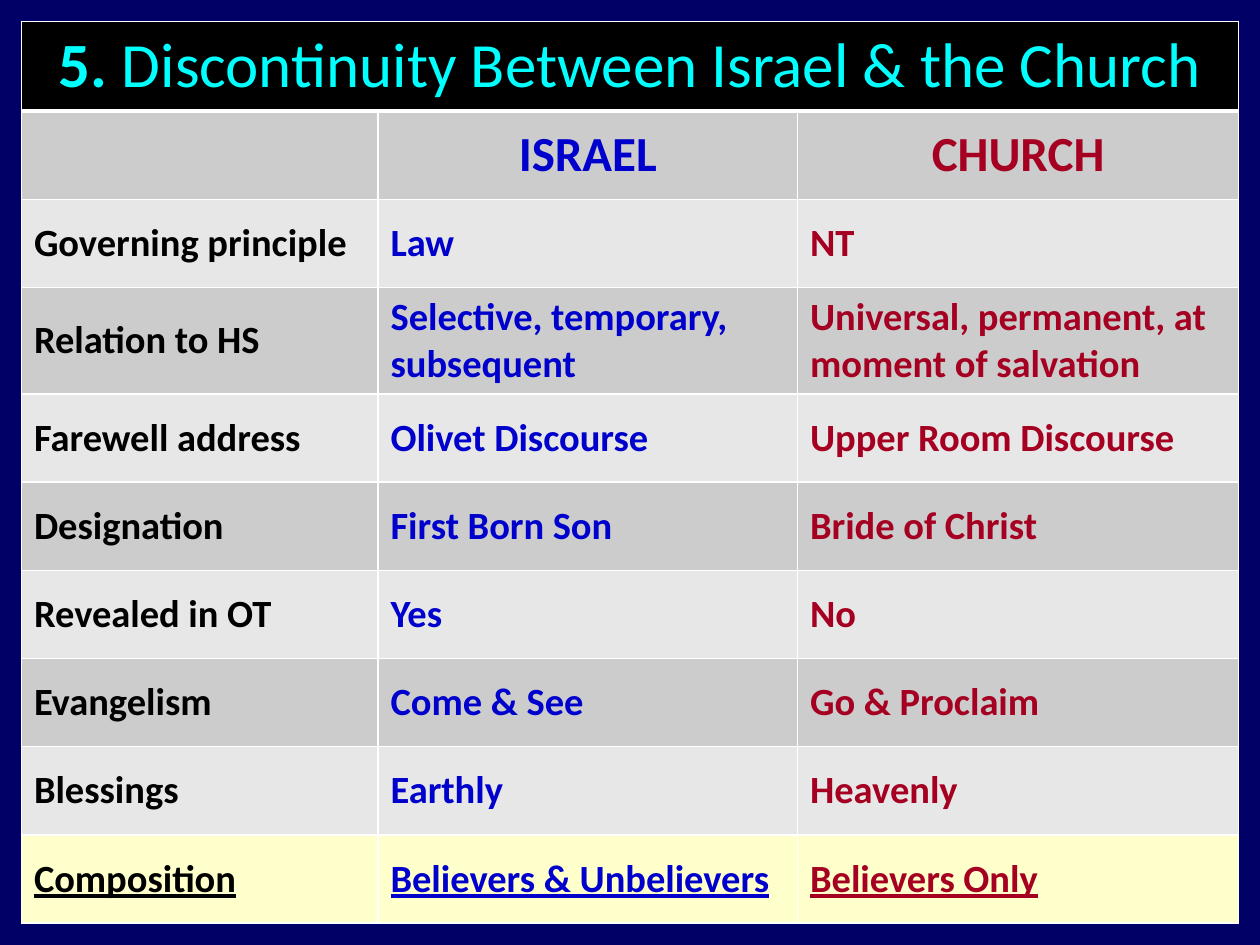
"""Build a slide with a table contrasting Israel and the Church."""
from lxml import etree
from pptx import Presentation
from pptx.dml.color import RGBColor
from pptx.enum import text
from pptx.oxml import ns
from pptx.util import Inches, Pt

NAVY = RGBColor(0x00, 0x00, 0x66)
BLACK = RGBColor(0x00, 0x00, 0x00)
CYAN = RGBColor(0x00, 0xFF, 0xFF)
WHITE = RGBColor(0xFF, 0xFF, 0xFF)
BLUE = RGBColor(0x00, 0x00, 0xCC)
RED = RGBColor(0xA5, 0x00, 0x21)
GRAY = RGBColor(0xCC, 0xCC, 0xCC)
PALE_GRAY = RGBColor(0xE7, 0xE7, 0xE7)
CREAM = RGBColor(0xFF, 0xFF, 0xCC)

COLUMN_WIDTHS = [2.83, 3.33, 3.5]
COLUMN_COLORS = [BLACK, BLUE, RED]
ROW_HEIGHT = 0.7
ROWS = [
    ("", "ISRAEL", "CHURCH"),
    ("Governing principle", "Law", "NT"),
    ("Relation to HS", "Selective, temporary, subsequent",
     "Universal, permanent, at moment of salvation"),
    ("Farewell address", "Olivet Discourse", "Upper Room Discourse"),
    ("Designation", "First Born Son", "Bride of Christ"),
    ("Revealed in OT", "Yes", "No"),
    ("Evangelism", "Come & See", "Go & Proclaim"),
    ("Blessings", "Earthly", "Heavenly"),
    ("Composition", "Believers & Unbelievers", "Believers Only"),
]


def style_cell(cell, color, top=1, bottom=1):
    properties = cell._tc.get_or_add_tcPr()
    for side, width in (("L", 1), ("R", 1), ("T", top), ("B", bottom)):
        line = etree.SubElement(properties, ns.qn(f"a:ln{side}"), w=str(Pt(width)))
        fill = etree.SubElement(line, ns.qn("a:solidFill"))
        etree.SubElement(fill, ns.qn("a:srgbClr"), val=str(WHITE))
    cell.fill.solid()
    cell.fill.fore_color.rgb = color
    cell.vertical_anchor = text.MSO_ANCHOR.MIDDLE


def style_font(font, size, color):
    font.name = "Calibri"
    font.size = Pt(size)
    font.color.rgb = color


deck = Presentation()
deck.slide_width, deck.slide_height = Inches(10), Inches(7.5)
page = deck.slides.add_slide(deck.slide_layouts[6])
page.background.fill.solid()
page.background.fill.fore_color.rgb = NAVY

row_count = len(ROWS) + 1
table = page.shapes.add_table(
    row_count, len(COLUMN_WIDTHS), Inches(0.17), Inches(0.17),
    Inches(sum(COLUMN_WIDTHS)), Inches(ROW_HEIGHT * row_count)).table
for column, width in zip(table.columns, COLUMN_WIDTHS):
    column.width = Inches(width)
for row in table.rows:
    row.height = Inches(ROW_HEIGHT)

title = table.cell(0, 0)
title.merge(table.cell(0, 2))
for cell in table.rows[0].cells:
    style_cell(cell, BLACK, bottom=3)
para = title.text_frame.paragraphs[0]
para.alignment = text.PP_ALIGN.CENTER
for words, bold in (("5. ", True), ("Discontinuity Between Israel & the Church", False)):
    span = para.add_run()
    span.text = words
    style_font(span.font, 36, CYAN)
    span.font.bold = bold

for row_number, labels in enumerate(ROWS, 1):
    is_heading = row_number == 1
    is_last = row_number == len(ROWS)
    fill_color = CREAM if is_last else GRAY if row_number % 2 else PALE_GRAY
    for column_number, label in enumerate(labels):
        cell = table.cell(row_number, column_number)
        style_cell(cell, fill_color, top=3 if is_heading else 1)
        cell.text = label
        para = cell.text_frame.paragraphs[0]
        para.alignment = text.PP_ALIGN.CENTER if is_heading else text.PP_ALIGN.LEFT
        style_font(para.font, 28 if is_heading else 22, COLUMN_COLORS[column_number])
        para.font.bold = True
        para.font.underline = is_last

deck.save("out.pptx")
